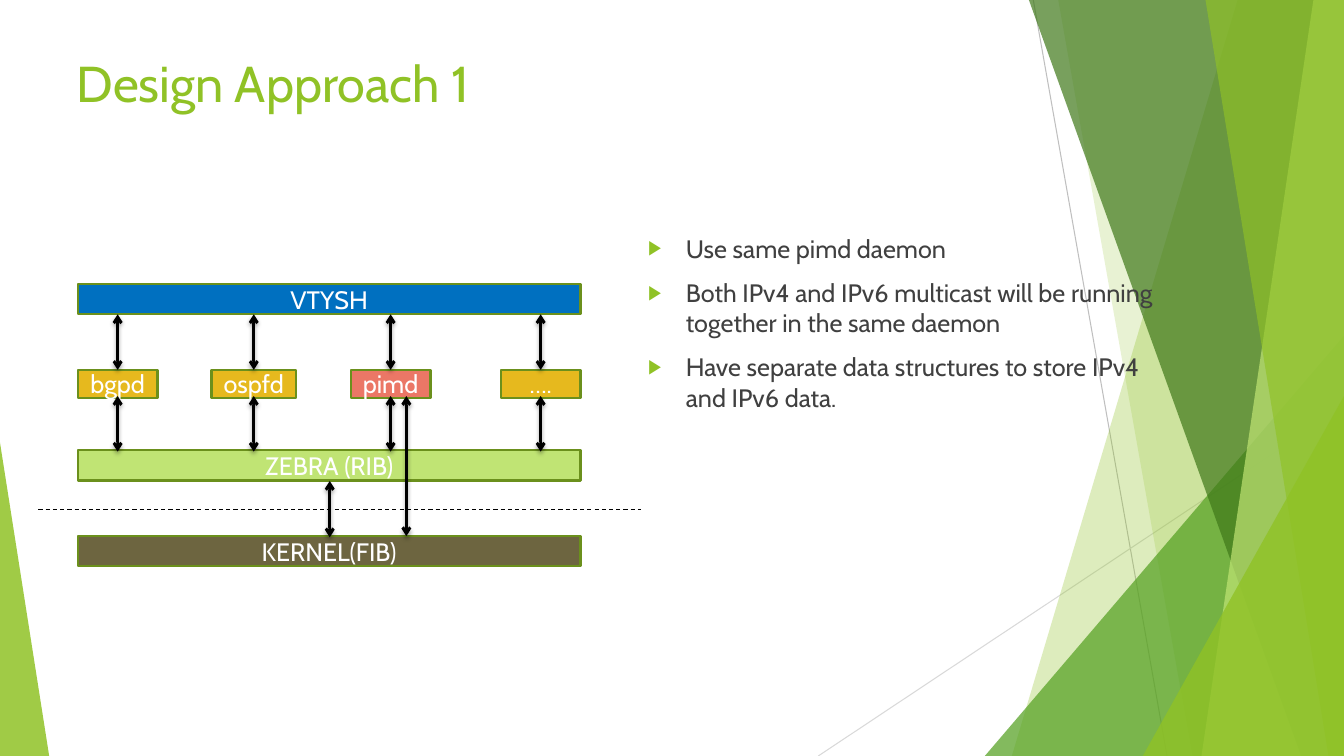
from lxml.etree import SubElement
from pptx import Presentation
from pptx.dml.color import RGBColor
from pptx.enum.dml import MSO_LINE
from pptx.enum.shapes import MSO_CONNECTOR, MSO_SHAPE
from pptx.enum.text import MSO_ANCHOR, MSO_AUTO_SIZE, PP_ALIGN
from pptx.oxml import parse_xml
from pptx.oxml.ns import nsdecls, qn
from pptx.util import Cm, Pt

FONT = "Cabin"
W, H = 33.87, 19.05
LEFT, BAR_W, BAR_H = 1.96, 12.67, 0.76
DAEMON_Y, DAEMON_H = 9.32, 0.71
GREEN = "90C226"

# Left, width, name, fill
DAEMONS = [
    (LEFT, 2.01, "bgpd", "E6B91E"),
    (5.33, 2.13, "ospfd", "E6B91E"),
    (8.84, 2.01, "pimd", "EB7766"),
    (12.62, 2.01, "….", "E6B91E"),
]
BULLETS = [
    "Use same pimd daemon",
    "Both IPv4 and IPv6 multicast will be running together in the same daemon",
    "Have separate data structures to store IPv4 and IPv6 data.",
]
SHADOW = (
    f'<a:effectLst {nsdecls("a")}><a:outerShdw blurRad="38100" dist="25400" '
    'dir="5400000" rotWithShape="0"><a:srgbClr val="000000">'
    '<a:alpha val="35000"/></a:srgbClr></a:outerShdw></a:effectLst>'
)
NO_EFFECT = f'<a:effectLst {nsdecls("a")}/>'


def rgb(value):
    return RGBColor.from_string(value)


def fill_solid(shape, color, alpha=100):
    shape.shadow.inherit = False
    shape.fill.solid()
    shape.fill.fore_color.rgb = rgb(color)
    if alpha < 100:
        clr = shape.fill._xPr.find(".//" + qn("a:srgbClr"))
        SubElement(clr, qn("a:alpha"), val=str(alpha * 1000))


def format_runs(p, size, color):
    for r in p.runs:
        r.font.name = FONT
        r.font.size = Pt(size)
        r.font.color.rgb = rgb(color)


def add_line(s, x1, y1, x2, y2, color, width, effect=NO_EFFECT):
    line = s.shapes.add_connector(
        MSO_CONNECTOR.STRAIGHT, Cm(x1), Cm(y1), Cm(x2), Cm(y2))
    line.line.color.rgb = rgb(color)
    line.line.width = Pt(width)
    line._element.spPr.append(parse_xml(effect))
    return line


def add_arrow(s, x, top, bottom):
    arrow = add_line(s, x, top, x, bottom, "000000", 2, SHADOW)
    ln = arrow.line._get_or_add_ln()
    for end in ("a:headEnd", "a:tailEnd"):
        SubElement(ln, qn(end), type="arrow")


def add_band(s, top_x, bottom_x, color, alpha):
    """Area between a slanted edge and the right side of the slide."""
    builder = s.shapes.build_freeform(Cm(top_x), 0)
    corners = [(W, 0), (W, H), (bottom_x, H)]
    builder.add_line_segments([(Cm(x), Cm(y)) for x, y in corners])
    band = builder.convert_to_shape()
    fill_solid(band, color, alpha)
    band.line.fill.background()


def add_triangle(s, x, y, w, apex, color, alpha):
    """Triangle standing on the bottom edge of the slide."""
    tri = s.shapes.add_shape(
        MSO_SHAPE.ISOSCELES_TRIANGLE, Cm(x), Cm(y), Cm(w), Cm(H - y))
    tri.adjustments[0] = apex
    fill_solid(tri, color, alpha)
    tri.line.fill.background()


def add_box(s, x, y, w, h, text, color):
    box = s.shapes.add_shape(MSO_SHAPE.RECTANGLE, Cm(x), Cm(y), Cm(w), Cm(h))
    fill_solid(box, color)
    box.line.color.rgb = rgb("6B901C")
    box.line.width = Pt(1.5)
    tf = box.text_frame
    tf.text = text
    tf.vertical_anchor = MSO_ANCHOR.MIDDLE
    p = tf.paragraphs[0]
    p.alignment = PP_ALIGN.CENTER
    format_runs(p, 18, "FFFFFF")


def place_text(ph, x, y, w, h, text, size, color):
    ph.left, ph.top, ph.width, ph.height = Cm(x), Cm(y), Cm(w), Cm(h)
    tf = ph.text_frame
    tf.text = text
    tf.word_wrap = True
    tf.auto_size = MSO_AUTO_SIZE.NONE
    tf.vertical_anchor = MSO_ANCHOR.TOP
    for p in tf.paragraphs:
        p.alignment = PP_ALIGN.LEFT
        format_runs(p, size, color)
    # Text stands in front of the decoration
    ph._element.getparent().append(ph._element)
    return tf


def add_bullet(p):
    p.space_before = Pt(10)
    pPr = p._p.get_or_add_pPr()
    pPr.set("marL", str(Cm(0.95)))
    pPr.set("indent", str(-Cm(0.95)))
    SubElement(SubElement(pPr, qn("a:buClr")), qn("a:srgbClr"), val=GREEN)
    SubElement(pPr, qn("a:buSzPct"), val="80000")
    SubElement(pPr, qn("a:buChar"), char="▶")


def draw_decoration(s):
    add_line(s, 26.04, 0, 29.41, H, "BFBFBF", 0.75)
    add_line(s, W, 10.24, 20.62, H, "D9D9D9", 0.75)
    add_band(s, 31.19, 25.5, GREEN, 30)
    add_band(s, 26.67, 30.05, GREEN, 20)
    add_triangle(s, 24.82, 8.46, 9.05, 1, "54A021", 72)
    add_band(s, 25.93, 32.79, "3F7819", 70)
    add_band(s, 33.1, 30.28, "C0E474", 70)
    add_band(s, 30.38, 33.48, GREEN, 65)
    add_triangle(s, 28.8, 9.98, 5.07, 1, GREEN, 80)
    add_triangle(s, 0, 11.15, 1.24, 0, GREEN, 85)


def draw_architecture(s):
    # Layers
    add_box(s, LEFT, 7.16, BAR_W, BAR_H, "VTYSH", "0070C0")
    add_box(s, LEFT, 11.35, BAR_W, BAR_H, "ZEBRA (RIB)", "C0E474")
    add_box(s, LEFT, 13.51, BAR_W, BAR_H, "KERNEL(FIB)", "6D6540")
    # Daemons, each linked to the layers above and below
    for x, w, name, color in DAEMONS:
        add_box(s, x, DAEMON_Y, w, DAEMON_H, name, color)
        add_arrow(s, x + w / 2, 7.92, DAEMON_Y)
        add_arrow(s, x + w / 2, 9.98, 11.38)
    # Kernel links and boundary
    add_arrow(s, 8.31, 12.12, 13.54)
    boundary = add_line(s, 0.97, 12.83, 16.15, 12.83, "000000", 0.75)
    boundary.line.dash_style = MSO_LINE.DASH
    add_arrow(s, 10.24, 9.98, 13.51)


def main():
    prs = Presentation()
    prs.slide_width, prs.slide_height = Cm(W), Cm(H)
    s = prs.slides.add_slide(prs.slide_layouts[1])
    draw_decoration(s)
    place_text(s.shapes.title, 1.68, 1.19, 23.88, 3.66,
               "Design Approach 1", 36, GREEN)
    draw_architecture(s)
    tf = place_text(s.placeholders[1], 16.08, 5.74, 13.92, 10.77,
                    "\n".join(BULLETS), 18, "404040")
    for p in tf.paragraphs:
        add_bullet(p)
    prs.save("out.pptx")


if __name__ == "__main__":
    main()
